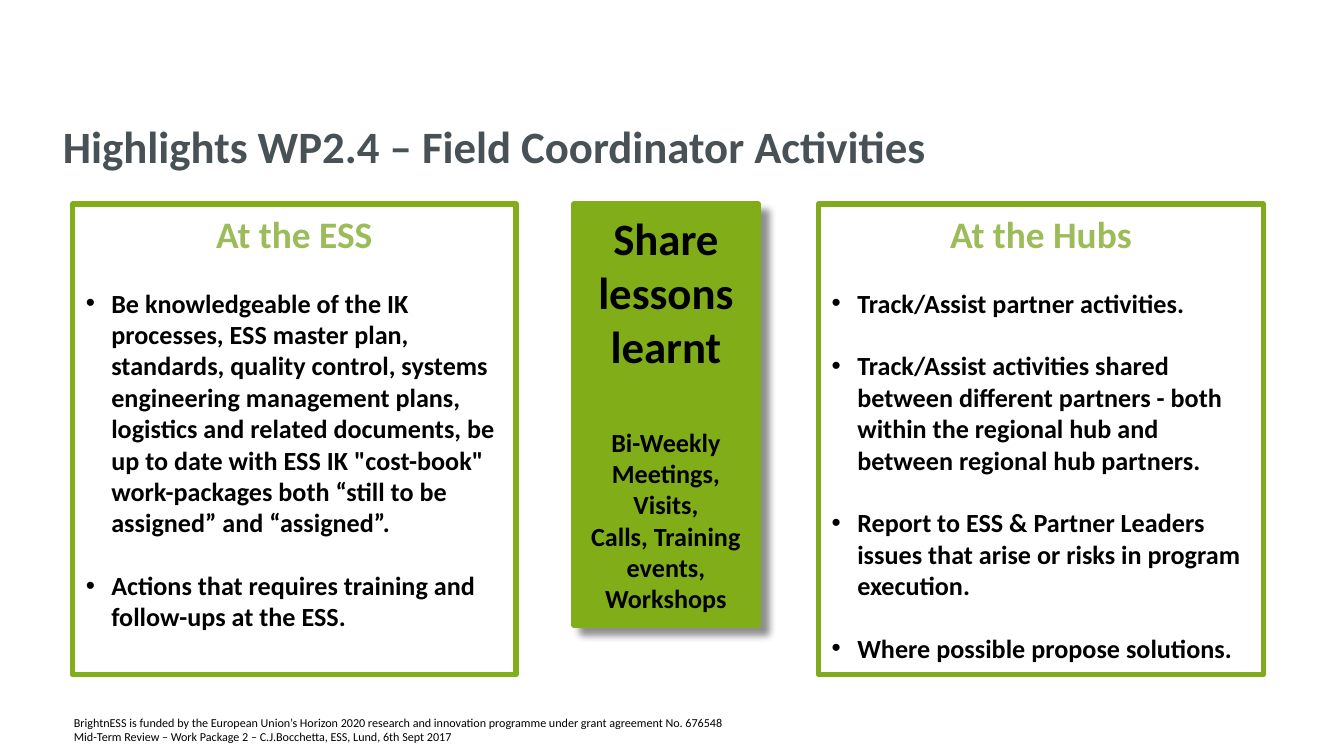
import dataclasses

import lxml.etree
import pptx
import pptx.dml.color
import pptx.enum.shapes
import pptx.enum.text
import pptx.oxml.ns
import pptx.util

Inches = pptx.util.Inches
Pt = pptx.util.Pt
Align = pptx.enum.text.PP_ALIGN
Anchor = pptx.enum.text.MSO_ANCHOR
qn = pptx.oxml.ns.qn


@dataclasses.dataclass(frozen=True)
class Theme:
    """Colours, type sizes and line weight of the slide."""
    font: str = "Calibri"
    title: str = "485156"
    heading: str = "9CBB59"
    ink: str = "000000"
    ess_border: str = "82AF19"
    hubs_border: str = "82AA1E"
    share_fill: str = "80AD18"
    title_size: float = 24
    heading_size: float = 20
    body_size: float = 14
    footer_size: float = 6.5
    border: float = 3


THEME = Theme()
TITLE = "Highlights WP2.4 – Field Coordinator Activities"
ESS_TASKS = [
    "Be knowledgeable of the IK processes, ESS master plan, standards, quality "
    "control, systems engineering management plans, logistics and related "
    "documents, be up to date with ESS IK \"cost-book\" work-packages both "
    "“still to be assigned” and “assigned”.",
    "Actions that requires training and follow-ups at the ESS.",
]
HUB_TASKS = [
    "Track/Assist partner activities.",
    "Track/Assist activities shared between different partners - both within "
    "the regional hub and between regional hub partners.",
    "Report to ESS & Partner Leaders issues that arise or risks in program execution.",
    "Where possible propose solutions.",
]
SHARING = ["Bi-Weekly", "Meetings,", "Visits,", "Calls, Training events, Workshops"]
FUNDING = ("BrightnESS is funded by the European Union’s Horizon 2020 research and "
           "innovation programme under grant agreement No. 676548")
REVIEW = "Mid-Term Review – Work Package 2 – C.J.Bocchetta, ESS, Lund, 6th Sept 2017"


def set_all(target, values):
    """Set each named attribute of the target."""
    for name, value in values.items():
        setattr(target, name, value)


def rgb(colour):
    """Turn a hex string into a colour."""
    return pptx.dml.color.RGBColor.from_string(colour)


def write(frame, lines):
    """Fill a frame from (text, size, colour, bold, bullet, paragraph format) lines."""
    for index, (text, size, colour, bold, bullet, layout) in enumerate(lines):
        paragraph = frame.add_paragraph() if index else frame.paragraphs[0]
        paragraph.text = text
        if bullet:
            properties = paragraph._p.get_or_add_pPr()
            properties.set("marL", str(Inches(0.19)))
            properties.set("indent", str(-Inches(0.19)))
            lxml.etree.SubElement(properties, qn("a:buFont"), typeface="Arial")
            lxml.etree.SubElement(properties, qn("a:buChar"), char="•")
        set_all(paragraph, layout)
        font = paragraph.runs[0].font
        set_all(font, {"name": THEME.font, "size": Pt(size), "bold": bold})
        font.color.rgb = rgb(colour)


def add_text(slide, box, lines, layout):
    """Place a wrapped text box."""
    frame = slide.shapes.add_textbox(*map(Inches, box)).text_frame
    set_all(frame, {"word_wrap": True, **layout})
    write(frame, lines)


def add_box(slide, box, border, fill=None):
    """Place a bordered rectangle with text starting at its top."""
    panel = slide.shapes.add_shape(
        pptx.enum.shapes.MSO_SHAPE.RECTANGLE, *map(Inches, box))
    panel.shadow.inherit = False
    panel.line.color.rgb = rgb(border)
    panel.line.width = Pt(THEME.border)
    if fill:
        panel.fill.solid()
        panel.fill.fore_color.rgb = rgb(fill)
    else:
        panel.fill.background()
    set_all(panel.text_frame, {"word_wrap": True, "vertical_anchor": Anchor.TOP})
    return panel


def add_task_panel(slide, box, border, heading, tasks):
    """Place an outlined panel with a heading and spaced bullets."""
    panel = add_box(slide, box, border)
    spaced = {"alignment": Align.LEFT, "space_before": Pt(16.8)}
    write(panel.text_frame, [
        (heading, THEME.heading_size, THEME.heading, True, False,
         {"alignment": Align.CENTER}),
        *((task, THEME.body_size, THEME.ink, True, True, spaced) for task in tasks),
    ])


def add_share_panel(slide, box, heading, items):
    """Place the filled, shadowed panel between the two task panels."""
    panel = add_box(slide, box, THEME.share_fill, THEME.share_fill)
    effects = panel._element.spPr.find(qn("a:effectLst"))
    shadow = lxml.etree.SubElement(
        effects, qn("a:outerShdw"), blurRad=str(Pt(4)), dist=str(Pt(6)),
        dir=str(45 * 60000), algn="tl", rotWithShape="0")
    tint = lxml.etree.SubElement(shadow, qn("a:srgbClr"), val=THEME.ink)
    lxml.etree.SubElement(tint, qn("a:alpha"), val="43000")
    centred = {"alignment": Align.CENTER}
    gap = {**centred, "space_before": Pt(28.8)}
    write(panel.text_frame, [
        (heading, THEME.title_size, THEME.ink, True, False, centred),
        *((item, THEME.body_size, THEME.ink, True, False, centred if index else gap)
          for index, item in enumerate(items)),
    ])


def add_title(slide, box):
    """Place the slide title."""
    add_text(slide, box, [(TITLE, THEME.title_size, THEME.title, True, False, {})],
             {"vertical_anchor": Anchor.MIDDLE})


def add_footer(slide, box):
    """Place the funding and review lines."""
    style = (THEME.footer_size, THEME.ink, False, False)
    add_text(slide, box,
             [(FUNDING, *style, {"line_spacing": Pt(8)}), (REVIEW, *style, {})],
             {"margin_left": 0})


def main():
    """Build and save the slide."""
    deck = pptx.Presentation()
    set_all(deck, {"slide_width": Inches(10), "slide_height": Inches(10 * 9 / 16)})
    slide = deck.slides.add_slide(deck.slide_layouts[6])
    top = 1.52
    add_footer(slide, (0.55, 5.27, 5.7, 0.27))
    add_title(slide, (0.37, 0.8, 9.08, 0.56))
    add_task_panel(slide, (0.54, top, 3.3, 3.5), THEME.ess_border,
                   "At the ESS", ESS_TASKS)
    add_task_panel(slide, (6.09, top, 3.31, 3.5), THEME.hubs_border,
                   "At the Hubs", HUB_TASKS)
    add_share_panel(slide, (4.27, top, 1.37, 3.13), "Share lessons learnt", SHARING)
    deck.save("out.pptx")


if __name__ == "__main__":
    main()
